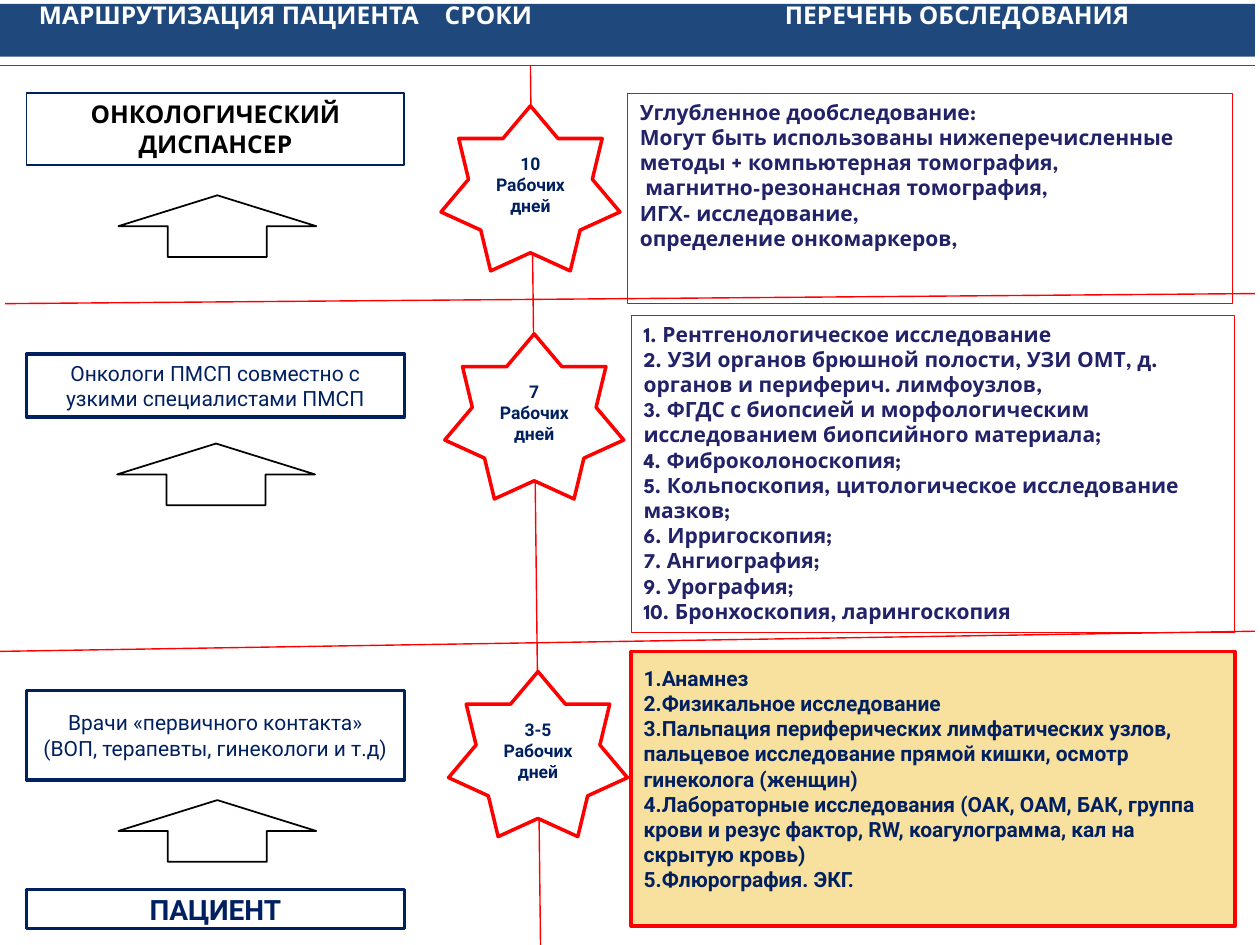
from lxml import etree
from pptx import Presentation
from pptx.dml.color import RGBColor as Rgb
from pptx.enum.shapes import MSO_CONNECTOR as Con, MSO_SHAPE as Geo
from pptx.enum.text import MSO_ANCHOR as Anc, PP_ALIGN as Al
from pptx.oxml.ns import qn
from pptx.util import Inches, Pt

# Content
HEADS = ["МАРШРУТИЗАЦИЯ ПАЦИЕНТА", "СРОКИ", "ПЕРЕЧЕНЬ ОБСЛЕДОВАНИЯ"]
DEEP = [
    "Углубленное дообследование:",
    "Могут быть использованы нижеперечисленные методы + компьютерная томография,",
    " магнитно-резонансная томография,",
    "ИГХ- исследование,",
    "определение онкомаркеров,",
]
TESTS = [
    "1. Рентгенологическое исследование",
    "2. УЗИ органов брюшной полости, УЗИ ОМТ, д. органов и периферич. лимфоузлов,",
    "3. ФГДС с биопсией и морфологическим исследованием биопсийного материала;",
    "4. Фиброколоноскопия;",
    "5. Кольпоскопия, цитологическое исследование мазков;",
    "6. Ирригоскопия;",
    "7. Ангиография;",
    "9. Урография;",
    "10. Бронхоскопия, ларингоскопия",
]
FIRST = [
    "1.Анамнез",
    "2.Физикальное исследование",
    "3.Пальпация периферических лимфатических узлов, пальцевое исследование "
    "прямой кишки, осмотр гинеколога (женщин)",
    "4.Лабораторные исследования (ОАК, ОАМ, БАК, группа крови и резус фактор, "
    "RW, коагулограмма, кал на скрытую кровь)",
    "5.Флюрография. ЭКГ.",
]

# Route boxes: top, height, style, text
STEPS = [
    (0.74, 0.57, "top", ["ОНКОЛОГИЧЕСКИЙ", "ДИСПАНСЕР"]),
    (2.81, 0.5, "step", ["Онкологи ПМСП совместно с узкими специалистами ПМСП"]),
    (5.48, 0.71, "step",
     ["Врачи «первичного контакта» (ВОП, терапевты, гинекологи и т.д)"]),
    (7.06, 0.31, "base", ["ПАЦИЕНТ"]),
]
ARROWS = [(0.94, 1.55), (0.93, 3.52), (0.94, 6.35)]
# Terms: top of star, days
TERMS = [(0.84, "10"), (2.65, "7"), (5.33, "3-5")]
# Examination lists: place, style, text
LISTS = [
    ((4.98, 0.74, 4.8, 1.67), "list", DEEP),
    ((5.01, 2.5, 4.79, 2.52), "list", TESTS),
    ((5.01, 5.17, 4.79, 2.18), "first", FIRST),
]
# Dividers and time axis: x1, y1, x2, y2
LINES = [
    (0, 0.52, 9.96, 0.52), (0.04, 2.41, 9.96, 2.33),
    (0, 5.17, 9.96, 5.01), (4.21, 0.52, 4.29, 7.5),
]

# Theme: fill, line, width, font, size, colour, bold, alignment, anchor
KEYS = ("fill", "line", "width", "name", "size", "ink", "bold", "align", "anchor")
NAVY, RED, WHITE, BLACK = "002060", "FF0000", "FFFFFF", "000000"
HEAD, BODY = "League Spartan", "Roboto"
RULE = 0.79
THEME = {key: dict(zip(KEYS, row)) for key, row in {
    "band": ("1F497D", None, 0, HEAD, 14, WHITE, True, Al.LEFT, Anc.MIDDLE),
    "top": (WHITE, NAVY, 1, HEAD, 14, BLACK, True, Al.CENTER, Anc.TOP),
    "step": (WHITE, NAVY, 2, BODY, 12, NAVY, False, Al.CENTER, Anc.MIDDLE),
    "base": (WHITE, NAVY, 2, BODY, 16, NAVY, True, Al.CENTER, Anc.MIDDLE),
    "arrow": (WHITE, BLACK, 1, BODY, 12, BLACK, False, Al.CENTER, Anc.MIDDLE),
    "star": (WHITE, RED, 2, BODY, 10, NAVY, True, Al.CENTER, Anc.MIDDLE),
    "list": (None, RED, 0.5, HEAD, 12, "222268", True, Al.LEFT, Anc.TOP),
    "first": ("F8E19F", RED, 2, BODY, 12, NAVY, True, Al.LEFT, Anc.MIDDLE),
}.items()}

deck = Presentation()
deck.slide_width, deck.slide_height = Inches(10), Inches(7.5)
slide = deck.slides.add_slide(deck.slide_layouts[6])


def put(geo, place, look, text=()):
    """Add a shape in a theme style, one paragraph for each text item."""
    form = THEME[look]
    shape = slide.shapes.add_shape(geo, *map(Inches, place))
    shape.shadow.inherit = False
    for part, tint in ((shape.fill, form["fill"]), (shape.line.fill, form["line"])):
        if tint:
            part.solid()
            part.fore_color.rgb = Rgb.from_string(tint)
        else:
            part.background()
    if form["line"]:
        shape.line.width = Pt(form["width"])
    frame = shape.text_frame
    frame.word_wrap = True
    frame.vertical_anchor = form["anchor"]
    face = {"name": form["name"], "size": Pt(form["size"]), "bold": form["bold"]}
    for i, item in enumerate(text):
        para = frame.add_paragraph() if i else frame.paragraphs[0]
        para.alignment = form["align"]
        run = para.add_run()
        run.text = item
        for key, val in face.items():
            setattr(run.font, key, val)
        run.font.color.rgb = Rgb.from_string(form["ink"])
    return shape


# Header band, with its headings on tab stops
band = put(Geo.RECTANGLE, (0, 0.03, 9.96, 0.42), "band", ["\t".join(HEADS)])
for key, val in {"left": 0.31, "right": 0, "top": 0, "bottom": 0.24}.items():
    setattr(band.text_frame, "margin_" + key, Inches(val))
props = band.text_frame.paragraphs[0]._p.get_or_add_pPr()
tabs = etree.SubElement(props, qn("a:tabLst"))
for stop in (3.22, 5.92):
    etree.SubElement(tabs, qn("a:tab"), pos=str(Inches(stop)), algn="l")

# Dividers and time axis
for ends in LINES:
    rule = slide.shapes.add_connector(Con.STRAIGHT, *map(Inches, ends))
    rule.line.color.rgb = Rgb.from_string(RED)
    rule.line.width = Pt(RULE)
    etree.SubElement(rule._element.spPr, qn("a:effectLst"))

# Patient route
for top, high, look, text in STEPS:
    put(Geo.RECTANGLE, (0.21, top, 3, high), look, text)
for left, top in ARROWS:
    put(Geo.UP_ARROW, (left, top, 1.57, 0.49), "arrow")

# Terms, each star a little further right along the axis
for i, (top, days) in enumerate(TERMS):
    put(Geo.STAR_7_POINT, (3.5 + 0.03 * i, top, 1.42, 1.31), "star",
        [days + " Рабочих дней"])

# Examination lists
for place, look, text in LISTS:
    box = put(Geo.RECTANGLE, place, look, text)
    if look == "first":
        box.text_frame.margin_bottom = Inches(0.21)

deck.save("out.pptx")
